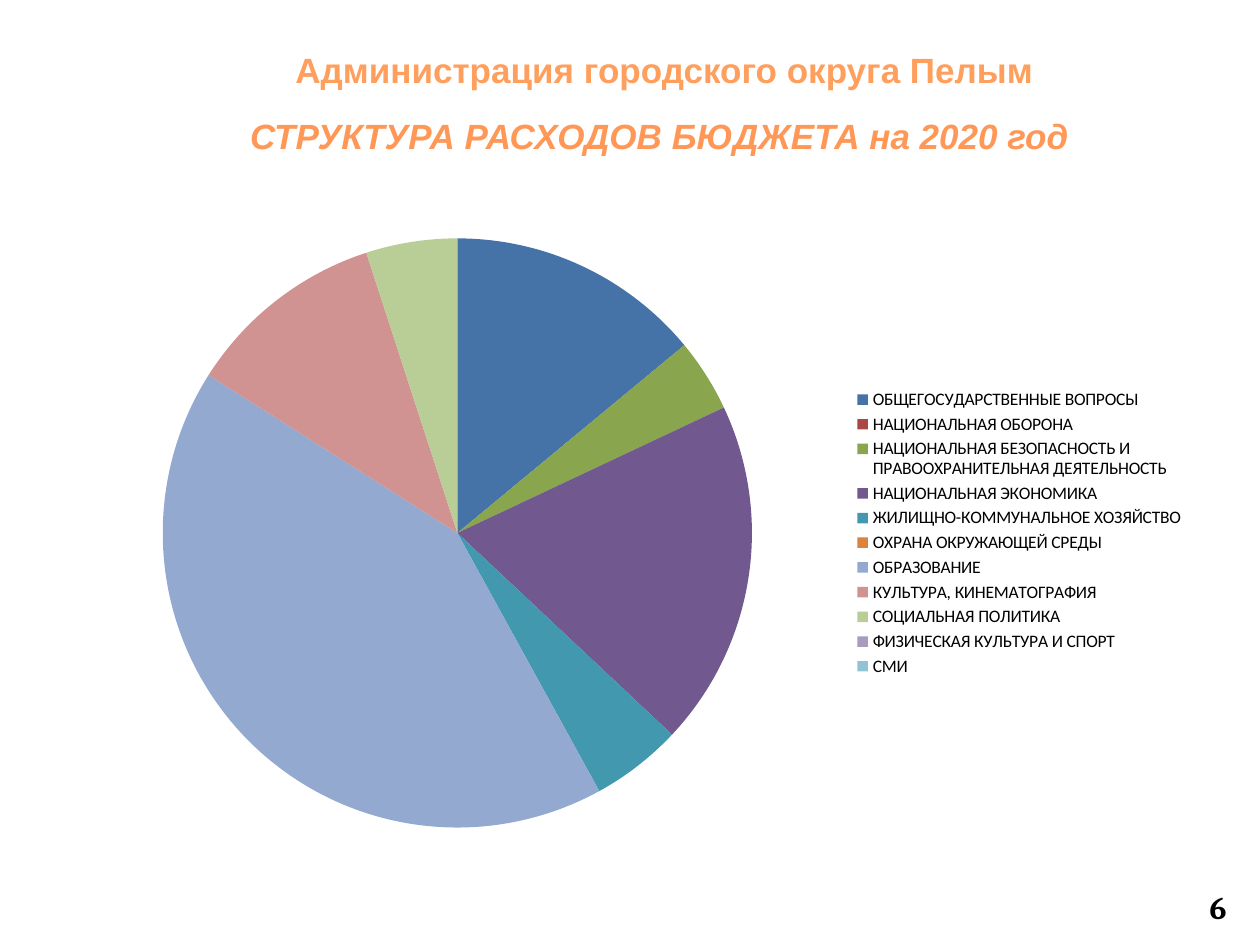
import pptx
import pptx.util
import pptx.chart.data
import pptx.dml.color
import pptx.enum.chart
import pptx.enum.text

PX = 914400 // 126
COLORS = {"title": "FF9F5D", "subtitle": "FF9856", "text": "000000"}
EXPENSES = [
    ("ОБЩЕГОСУДАРСТВЕННЫЕ ВОПРОСЫ", 14, "4572A7"),
    ("НАЦИОНАЛЬНАЯ ОБОРОНА", 0, "AA4643"),
    ("НАЦИОНАЛЬНАЯ БЕЗОПАСНОСТЬ И ПРАВООХРАНИТЕЛЬНАЯ ДЕЯТЕЛЬНОСТЬ", 4, "89A54E"),
    ("НАЦИОНАЛЬНАЯ ЭКОНОМИКА", 19, "71588F"),
    ("ЖИЛИЩНО-КОММУНАЛЬНОЕ ХОЗЯЙСТВО", 5, "4198AF"),
    ("ОХРАНА ОКРУЖАЮЩЕЙ СРЕДЫ", 0, "DB843D"),
    ("ОБРАЗОВАНИЕ", 42, "93A9CF"),
    ("КУЛЬТУРА, КИНЕМАТОГРАФИЯ", 11, "D19392"),
    ("СОЦИАЛЬНАЯ ПОЛИТИКА", 5, "B9CD96"),
    ("ФИЗИЧЕСКАЯ КУЛЬТУРА И СПОРТ", 0, "A99BBD"),
    ("СМИ", 0, "91C3D5"),
]


def rgb(value):
    return pptx.dml.color.RGBColor.from_string(value)


def emu(*lengths):
    return [length * PX for length in lengths]


def add_text(slide, box, text, size, font_name, color, align, italic=False):
    frame = slide.shapes.add_textbox(*emu(*box)).text_frame
    frame.word_wrap = True
    frame.vertical_anchor = pptx.enum.text.MSO_ANCHOR.MIDDLE
    paragraph = frame.paragraphs[0]
    paragraph.text = text
    paragraph.alignment = align
    font = paragraph.font
    font.name = font_name
    font.size = pptx.util.Pt(size)
    font.bold = True
    font.italic = italic
    font.color.rgb = rgb(color)


def add_heading(slide, left, top):
    align = pptx.enum.text.PP_ALIGN
    add_text(slide, (left + 96, top, 766, 55), "Администрация городского округа Пелым",
             20, "Arial", COLORS["title"], align.LEFT)
    add_text(slide, (left, top + 66, 945, 55), "СТРУКТУРА РАСХОДОВ БЮДЖЕТА на 2020 год",
             20, "Arial", COLORS["subtitle"], align.CENTER, italic=True)


def add_page_number(slide, box):
    add_text(slide, box, "6", 18, "Cambria", COLORS["text"], pptx.enum.text.PP_ALIGN.RIGHT)


def add_expense_chart(slide, box):
    names, values, colors = zip(*EXPENSES)
    data = pptx.chart.data.CategoryChartData()
    data.categories = names
    data.add_series("Series 1", values)
    chart = slide.shapes.add_chart(
        pptx.enum.chart.XL_CHART_TYPE.PIE, *emu(*box), data).chart
    chart.has_title = False
    chart.font.name = "Calibri"
    chart.font.size = pptx.util.Pt(10)
    chart.font.color.rgb = rgb(COLORS["text"])
    chart.has_legend = True
    chart.legend.position = pptx.enum.chart.XL_LEGEND_POSITION.RIGHT
    chart.legend.include_in_layout = False
    plot = chart.plots[0]
    plot.vary_by_categories = True
    for index, color in enumerate(colors):
        point_format = plot.series[0].points[index].format
        point_format.fill.solid()
        point_format.fill.fore_color.rgb = rgb(color)
        point_format.line.fill.background()


def main():
    presentation = pptx.Presentation()
    presentation.slide_width, presentation.slide_height = emu(1260, 945)
    slide = presentation.slides.add_slide(presentation.slide_layouts[6])
    add_page_number(slide, (1176, 882, 63, 50))
    add_heading(slide, 187, 42)
    add_expense_chart(slide, (63, 221, 1134, 624))
    presentation.save("out.pptx")


if __name__ == "__main__":
    main()
